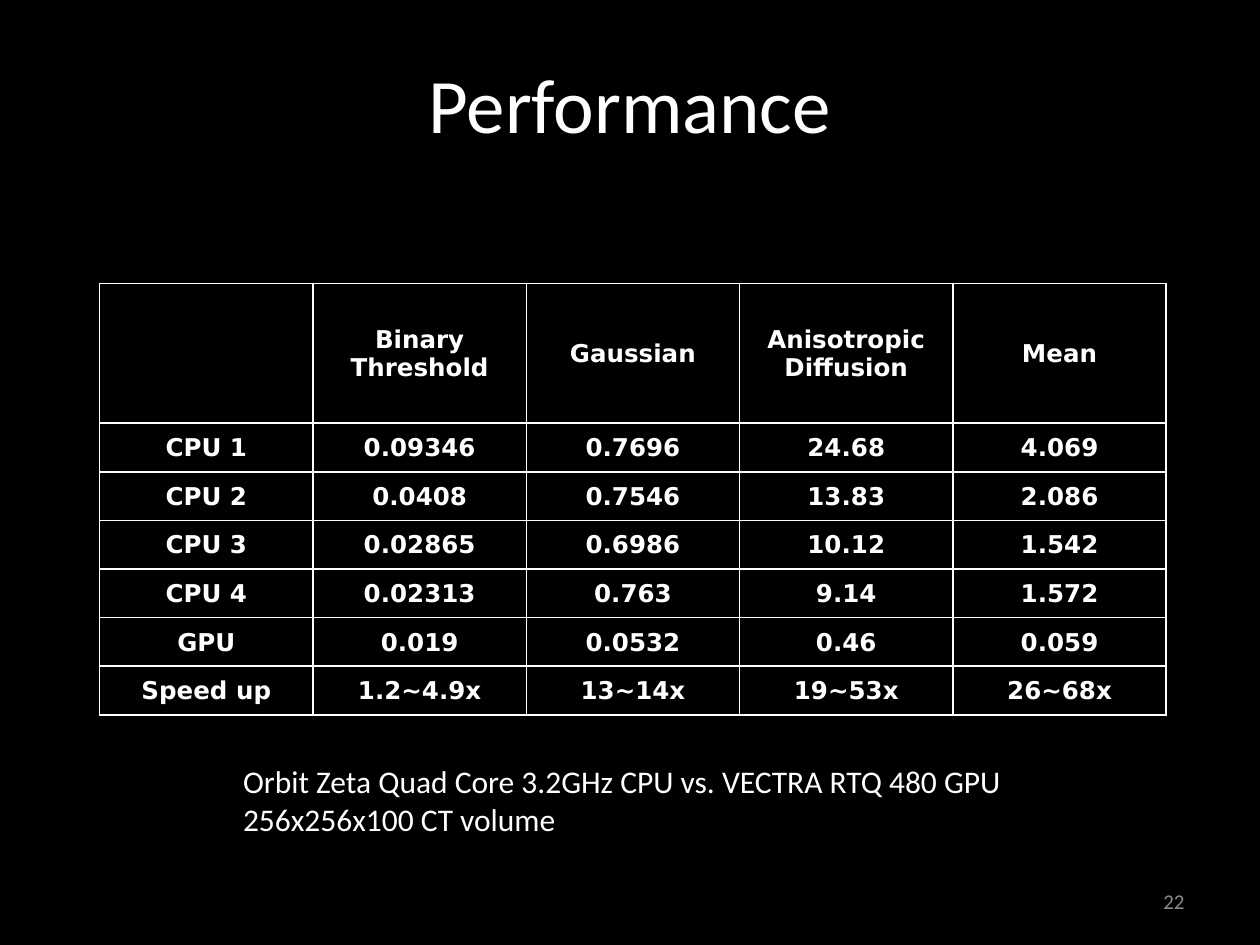
from lxml import etree
from pptx import Presentation
from pptx.dml.color import RGBColor
from pptx.enum import text as t
from pptx.oxml.ns import qn
from pptx.util import Cm, Pt

# Content
TITLE = "Performance"
PAGE = "22"
ROWS = [
    ("", "Binary Threshold", "Gaussian", "Anisotropic Diffusion", "Mean"),
    ("CPU 1", "0.09346", "0.7696", "24.68", "4.069"),
    ("CPU 2", "0.0408", "0.7546", "13.83", "2.086"),
    ("CPU 3", "0.02865", "0.6986", "10.12", "1.542"),
    ("CPU 4", "0.02313", "0.763", "9.14", "1.572"),
    ("GPU", "0.019", "0.0532", "0.46", "0.059"),
    ("Speed up", "1.2~4.9x", "13~14x", "19~53x", "26~68x"),
]
NOTES = [
    "Orbit Zeta Quad Core 3.2GHz CPU vs. VECTRA RTQ 480 GPU",
    "256x256x100 CT volume",
]
COLORS = {"back": "000000", "text": "FFFFFF", "page": "8C8C8C"}
COL_W, HEAD_H, ROW_H = 4.3, 2.82, 0.98


def write(frame, lines, size, font="Calibri", color="text", align=None, bold=False):
    for i, line in enumerate(lines):
        para = frame.paragraphs[0] if i == 0 else frame.add_paragraph()
        para.alignment = align
        run = para.add_run()
        run.text = line
        run.font.size = Pt(size)
        run.font.name = font
        run.font.bold = bold
        run.font.color.rgb = RGBColor.from_string(COLORS[color])


def add_text(slide, box, lines, size, **style):
    frame = slide.shapes.add_textbox(*map(Cm, box)).text_frame
    write(frame, lines, size, **style)
    return frame


def border(cell):
    props = cell._tc.get_or_add_tcPr()
    for side in ("lnL", "lnR", "lnT", "lnB"):
        line = etree.SubElement(props, qn("a:" + side), w=str(Pt(1)))
        fill = etree.SubElement(line, qn("a:solidFill"))
        etree.SubElement(fill, qn("a:srgbClr"), val=COLORS["text"])


def add_grid(slide):
    count, cols = len(ROWS), len(ROWS[0])
    height = HEAD_H + ROW_H * (count - 1)
    table = slide.shapes.add_table(
        count, cols, Cm(2.01), Cm(5.71), Cm(COL_W * cols), Cm(height)).table
    table.first_row = table.horz_banding = False
    for col in table.columns:
        col.width = Cm(COL_W)
    for r, row in enumerate(ROWS):
        table.rows[r].height = Cm(ROW_H if r else HEAD_H)
        for c, value in enumerate(row):
            cell = table.cell(r, c)
            border(cell)
            cell.fill.background()
            cell.margin_left = cell.margin_right = cell.margin_top = Cm(0.03)
            cell.margin_bottom = 0
            cell.vertical_anchor = t.MSO_ANCHOR.MIDDLE
            if value:
                write(cell.text_frame, [value], 14, font="DejaVu Sans",
                      align=t.PP_ALIGN.CENTER, bold=True)


def main():
    deck = Presentation()
    deck.slide_width, deck.slide_height = Cm(25.4), Cm(19.05)
    slide = deck.slides.add_slide(deck.slide_layouts[5])
    slide.background.fill.solid()
    slide.background.fill.fore_color.rgb = RGBColor.from_string(COLORS["back"])

    # Title
    title = slide.shapes.title
    title.left, title.top, title.width, title.height = map(Cm, (1.27, 0.76, 22.86, 2.62))
    title.text_frame.vertical_anchor = t.MSO_ANCHOR.MIDDLE
    write(title.text_frame, [TITLE], 44, align=t.PP_ALIGN.CENTER)

    # Page number
    page = add_text(slide, (18.2, 17.66, 5.93, 1.01), [PAGE], 12,
                    color="page", align=t.PP_ALIGN.RIGHT)
    page.word_wrap = True
    page.vertical_anchor = t.MSO_ANCHOR.MIDDLE

    # Timing table
    add_grid(slide)

    # Test setup
    setup = add_text(slide, (4.65, 15.24, 16.28, 1.8), NOTES, 18)
    setup.word_wrap = False
    setup.auto_size = t.MSO_AUTO_SIZE.SHAPE_TO_FIT_TEXT

    deck.save("out.pptx")


if __name__ == "__main__":
    main()
